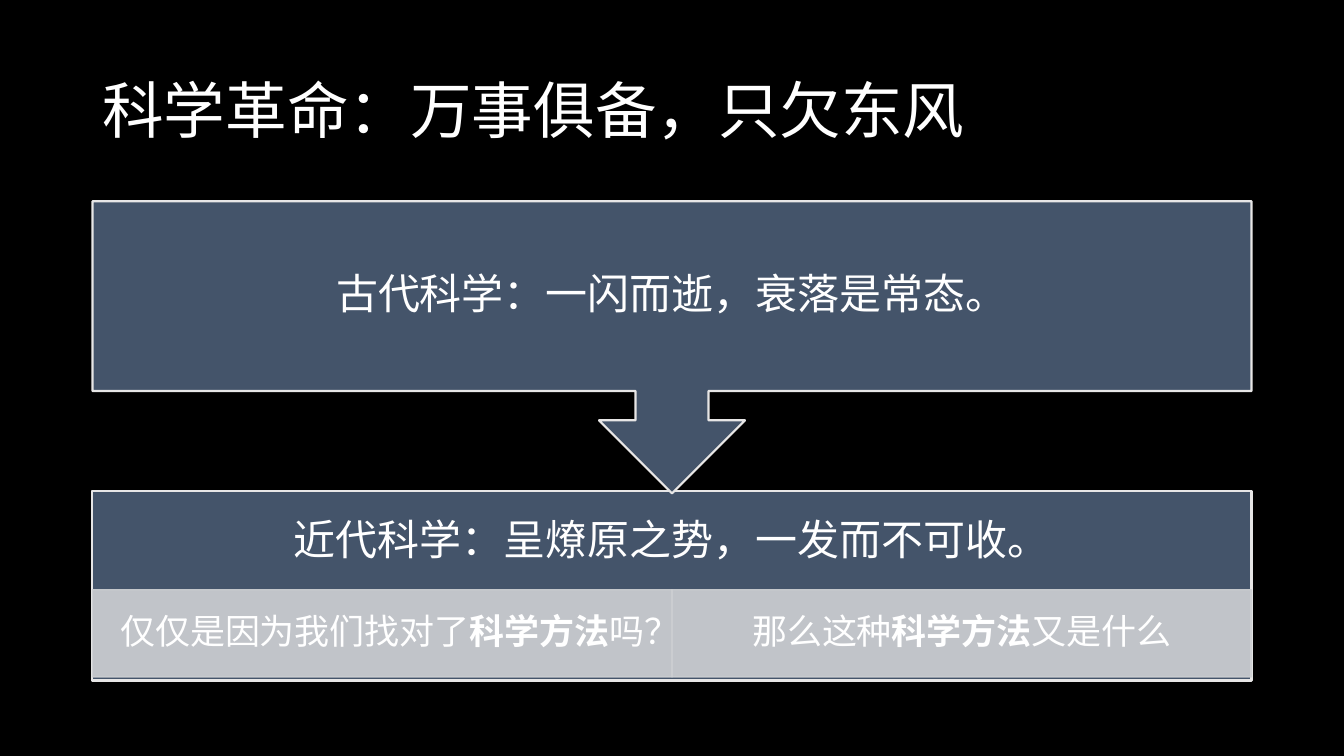
"""Build the slide on the scientific revolution: a callout pointing to a two-part box."""
from dataclasses import dataclass

from lxml import etree
from pptx import Presentation
from pptx.dml.color import RGBColor
from pptx.enum.shapes import MSO_SHAPE
from pptx.enum.text import MSO_ANCHOR, PP_ALIGN
from pptx.oxml.ns import qn
from pptx.slide import Slide
from pptx.util import Cm, Pt

RECT = MSO_SHAPE.RECTANGLE
CALLOUT = MSO_SHAPE.UP_ARROW_CALLOUT
MIDDLE = MSO_ANCHOR.MIDDLE
LEFT, CENTER = PP_ALIGN.LEFT, PP_ALIGN.CENTER

BLACK = RGBColor(0x00, 0x00, 0x00)
WHITE = RGBColor(0xFF, 0xFF, 0xFF)
SLATE = RGBColor(0x44, 0x54, 0x6A)
PALE = RGBColor(0xE7, 0xE6, 0xE6)
GREY = RGBColor(0xCF, 0xD1, 0xD4)

FONT = "Noto Sans CJK SC"
MARGIN, WIDTH = 2.33, 29.21
HALF = WIDTH / 2
METHOD = "科学方法"


@dataclass(frozen=True)
class Box:
    """Position and size in centimetres."""
    x: float
    y: float
    w: float
    h: float

    def lengths(self) -> tuple[Cm, Cm, Cm, Cm]:
        """Return left, top, width and height."""
        return Cm(self.x), Cm(self.y), Cm(self.w), Cm(self.h)


@dataclass(frozen=True)
class Panel:
    """A filled and outlined shape."""
    box: Box
    fill: RGBColor
    line: RGBColor
    line_pt: float
    kind: int = RECT
    rotation: float = 0
    alpha: int = 100


@dataclass(frozen=True)
class Label:
    """A text box whose bold runs are those equal to METHOD."""
    box: Box
    runs: tuple[str, ...]
    size: float
    inset: tuple[float, float]
    align: int = CENTER


ANCIENT = Box(MARGIN, 5.07, WIDTH, 4.78)
MODERN = Box(MARGIN, 12.37, WIDTH, 4.78)
QUESTIONS = (
    ("仅仅是因为我们找对了", METHOD, "吗？"),
    ("那么这种", METHOD, "又是什么"),
)
CELLS = [Box(MARGIN + i * HALF, 14.86, HALF, 2.2) for i in range(len(QUESTIONS))]

PANELS = [
    Panel(MODERN, SLATE, PALE, 1.5),
    *(Panel(cell, GREY, GREY, 1, alpha=90) for cell in CELLS),
    Panel(Box(MARGIN, ANCIENT.y, WIDTH, 7.36), SLATE, PALE, 1.5, CALLOUT, 180),
]
LABELS = [
    Label(Box(MARGIN, 1.01, WIDTH, 3.68), ("科学革命：万事俱备，只欠东风",), 44, (0.25, 0.13), LEFT),
    Label(Box(MARGIN, MODERN.y, WIDTH, 2.58), ("近代科学：呈燎原之势，一发而不可收。",), 30, (0.59, 0.59)),
    *(Label(cell, runs, 25, (0.48, 0.08)) for cell, runs in zip(CELLS, QUESTIONS)),
    Label(ANCIENT, ("古代科学：一闪而逝，衰落是常态。",), 30, (0.59, 0.59)),
]


def add_panel(s: Slide, panel: Panel) -> None:
    """Draw one panel."""
    sp = s.shapes.add_shape(panel.kind, *panel.box.lengths())
    sp.shadow.inherit = False
    sp.rotation = panel.rotation
    sp.fill.solid()
    sp.fill.fore_color.rgb = panel.fill
    sp.line.color.rgb = panel.line
    sp.line.width = Pt(panel.line_pt)
    if panel.alpha < 100:
        for clr in sp.element.spPr.iter(qn("a:srgbClr")):
            etree.SubElement(clr, qn("a:alpha")).set("val", str(panel.alpha * 1000))


def add_label(s: Slide, label: Label) -> None:
    """Write one label."""
    tf = s.shapes.add_textbox(*label.box.lengths()).text_frame
    tf.word_wrap = True
    tf.vertical_anchor = MIDDLE
    tf.margin_left = tf.margin_right = Cm(label.inset[0])
    tf.margin_top = tf.margin_bottom = Cm(label.inset[1])
    p = tf.paragraphs[0]
    p.alignment = label.align
    p.line_spacing = 0.9
    for text in label.runs:
        r = p.add_run()
        r.text = text
        r.font.size = Pt(label.size)
        r.font.bold = text == METHOD
        r.font.color.rgb = WHITE
        r.font.name = FONT
        etree.SubElement(r.font._element, qn("a:ea")).set("typeface", FONT)


def main() -> None:
    """Build and save the slide."""
    prs = Presentation()
    prs.slide_width, prs.slide_height = Cm(33.87), Cm(19.05)
    s = prs.slides.add_slide(prs.slide_layouts[6])
    s.background.fill.solid()
    s.background.fill.fore_color.rgb = BLACK
    for panel in PANELS:
        add_panel(s, panel)
    for label in LABELS:
        add_label(s, label)
    prs.save("out.pptx")


if __name__ == "__main__":
    main()
